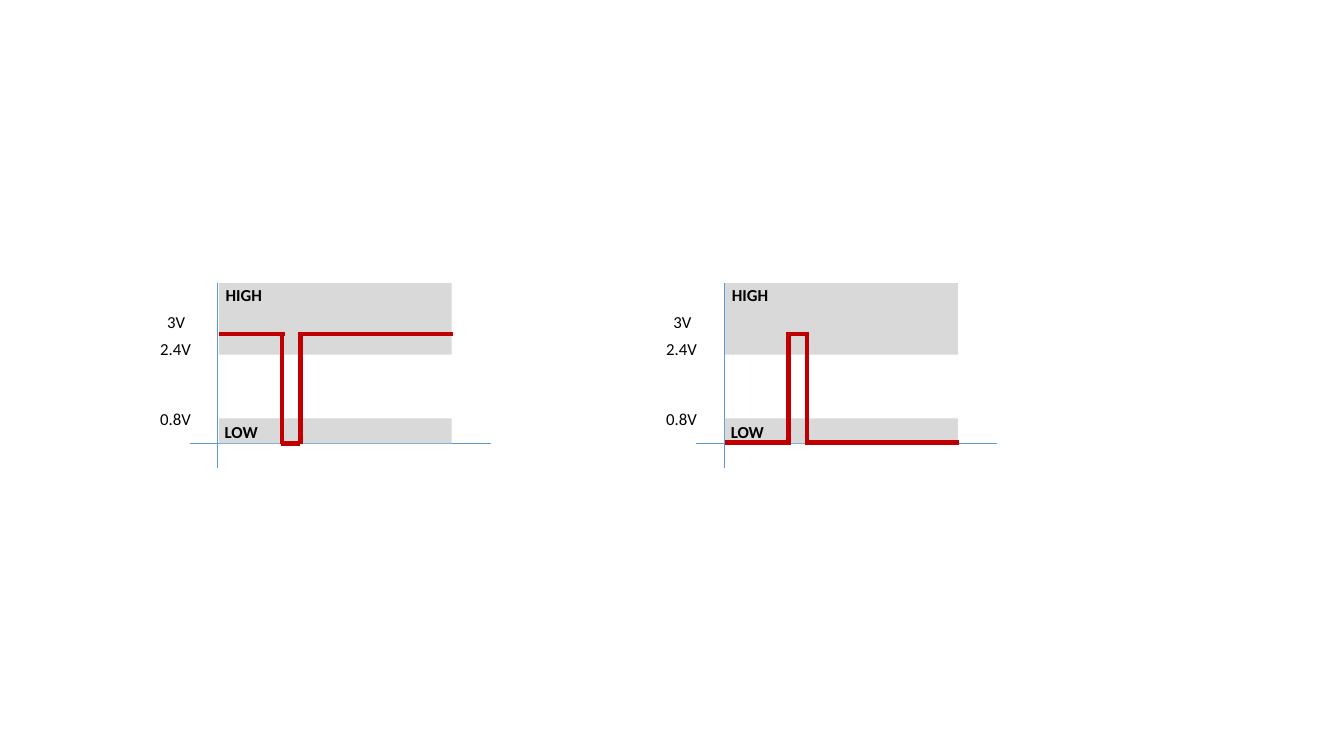
from dataclasses import dataclass

from lxml import etree
from pptx import Presentation
from pptx.dml.color import RGBColor
from pptx.enum.shapes import MSO_CONNECTOR, MSO_SHAPE
from pptx.enum.text import MSO_AUTO_SIZE
from pptx.oxml.ns import qn
from pptx.util import Inches, Pt

STRAIGHT = MSO_CONNECTOR.STRAIGHT
RECTANGLE = MSO_SHAPE.RECTANGLE
GROW = MSO_AUTO_SIZE.SHAPE_TO_FIT_TEXT

GREY, BLUE, RED, BLACK = "D9D9D9", "5B9BD5", "C00000", "000000"


@dataclass
class Panel:
    axis: float  # x of the voltage axis
    rest: float  # y of the signal at rest
    pulse: float  # y of the signal during the pulse


# Horizontal places below are measured from the voltage axis
@dataclass
class Band:
    top: float
    height: float


@dataclass
class Label:
    text: str
    left: float
    top: float
    width: float
    height: float
    bold: bool = False


@dataclass
class Segment:
    x1: float
    y1: float
    x2: float
    y2: float


PANELS = [Panel(2.16, 3.31, 4.4), Panel(7.18, 4.39, 3.31)]
BANDS = [Band(2.81, 0.71), Band(4.15, 0.25)]
AXES = [Segment(0, 2.81, 0, 4.64), Segment(-0.28, 4.4, 2.71, 4.4)]
LABELS = [
    Label("3V", -0.6, 3.04, 0.63, 0.41),
    Label("2.4V", -0.67, 3.31, 0.77, 0.41),
    Label("0.8V", -0.67, 4.01, 0.77, 0.41),
    Label("HIGH", -0.02, 2.78, 0.8, 0.3, True),
    Label("LOW", -0.03, 4.13, 0.8, 0.3, True),
]


def colour(value: str) -> RGBColor:
    return RGBColor.from_string(value)


def draw_band(page, panel: Panel, band: Band) -> None:
    shape = page.shapes.add_shape(
        RECTANGLE, Inches(panel.axis + 0.01), Inches(band.top),
        Inches(2.31), Inches(band.height))
    shape.shadow.inherit = False
    shape.fill.solid()
    shape.fill.fore_color.rgb = colour(GREY)
    shape.line.fill.background()


def draw_line(page, panel: Panel, segment: Segment, tint: str, width: float) -> None:
    line = page.shapes.add_connector(
        STRAIGHT, Inches(panel.axis + segment.x1), Inches(segment.y1),
        Inches(panel.axis + segment.x2), Inches(segment.y2))
    line.line.color.rgb = colour(tint)
    line.line.width = Pt(width)
    etree.SubElement(line._element.spPr, qn("a:effectLst"))


def draw_label(page, panel: Panel, label: Label) -> None:
    box = page.shapes.add_textbox(
        Inches(panel.axis + label.left), Inches(label.top),
        Inches(label.width), Inches(label.height))
    frame = box.text_frame
    frame.word_wrap = True
    frame.auto_size = GROW
    para = frame.paragraphs[0]
    para.text = label.text
    para.font.name = "Calibri"
    para.font.size = Pt(12)
    para.font.bold = label.bold
    para.font.color.rgb = colour(BLACK)


def signal(panel: Panel) -> list[Segment]:
    return [
        Segment(0.01, panel.rest, 0.67, panel.rest),
        Segment(0.8, panel.rest, 2.33, panel.rest),
        Segment(0.63, panel.pulse, 0.82, panel.pulse),
        Segment(0.64, 3.29, 0.64, 4.4),
        Segment(0.82, 3.29, 0.82, 4.4),
    ]


def draw_panel(page, panel: Panel) -> None:
    high_band, low_band = BANDS
    draw_band(page, panel, high_band)
    for axis in AXES:
        draw_line(page, panel, axis, BLUE, 0.5)
    draw_band(page, panel, low_band)
    for label in LABELS:
        draw_label(page, panel, label)
    for segment in signal(panel):
        draw_line(page, panel, segment, RED, 3)


def main() -> None:
    deck = Presentation()
    deck.slide_width = Inches(13.33)
    deck.slide_height = Inches(7.5)
    page = deck.slides.add_slide(deck.slide_layouts[6])
    for panel in PANELS:
        draw_panel(page, panel)
    deck.save("out.pptx")


if __name__ == "__main__":
    main()
